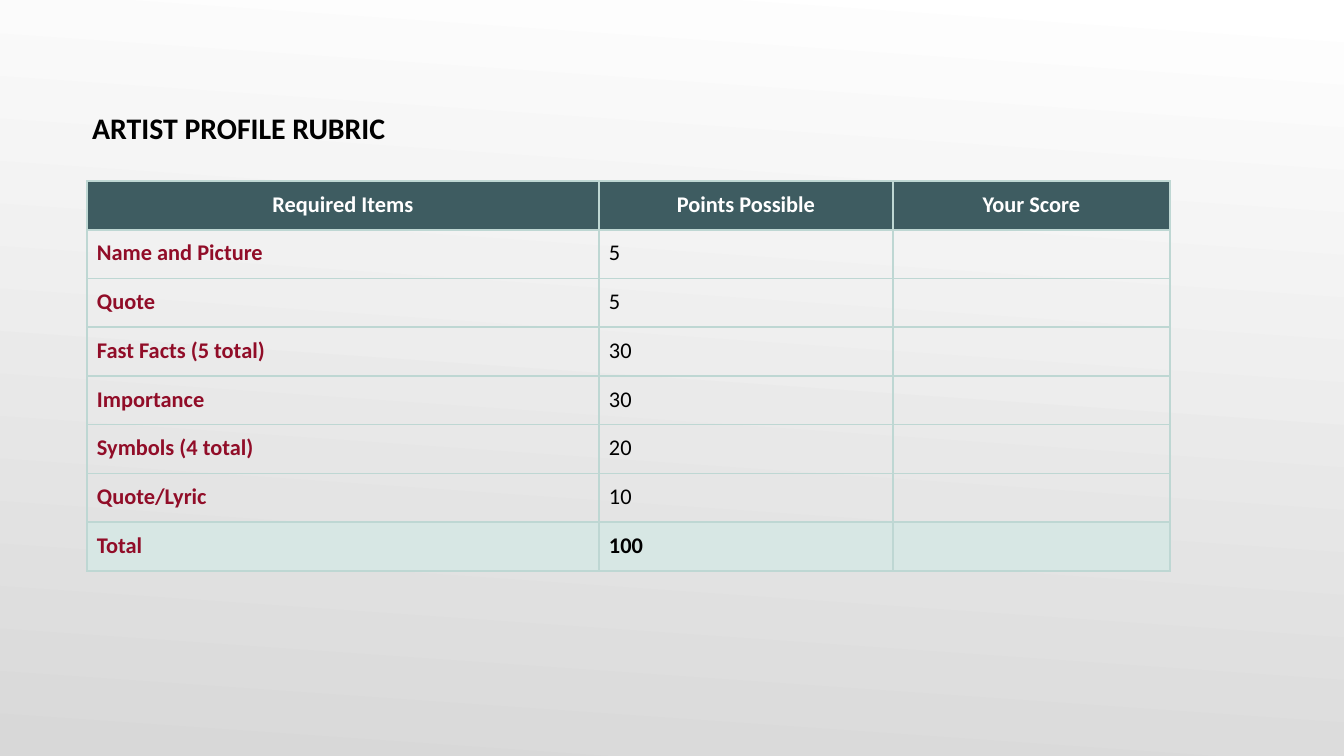
from lxml.etree import SubElement
from pptx import Presentation
from pptx.dml.color import RGBColor
from pptx.enum.text import MSO_ANCHOR, PP_ALIGN
from pptx.oxml.ns import qn
from pptx.util import Pt

TITLE = "ARTIST PROFILE RUBRIC"
ROWS = [
    ("Required Items", "Points Possible", "Your Score"),
    ("Name and Picture", "5", ""),
    ("Quote", "5", ""),
    ("Fast Facts (5 total)", "30", ""),
    ("Importance", "30", ""),
    ("Symbols (4 total)", "20", ""),
    ("Quote/Lyric", "10", ""),
    ("Total", "100", ""),
]
COLORS = {
    "top": "FFFFFF", "base": "D8D8D8", "head": "3E5C61", "total": "D7E7E4",
    "grid": "BED7D3", "item": "910D28", "white": "FFFFFF", "black": "000000",
}
SCALE = 914400 / 134.4
SLIDE = (1344, 756)
TITLE_BOX = (79, 104, 441, 48)
LEFT, TOP, HEIGHT = 87, 181, 390
WIDTHS = (512, 294, 277)
PAD = 10


def px(n):
    return round(n * SCALE)


def color(name):
    return RGBColor.from_string(COLORS[name])


def assign(target, **values):
    for name, value in values.items():
        setattr(target, name, value)


def write(frame, text, size, tint, bold, align=PP_ALIGN.LEFT):
    para = frame.paragraphs[0]
    para.alignment = align
    if not text:
        para._p.get_or_add_endParaRPr().set("sz", str(size * 100))
        return
    run = para.add_run()
    run.text = text
    assign(run.font, name="Calibri", size=Pt(size), bold=bold)
    run.font.color.rgb = color(tint)


def border(cell):
    props = cell._tc.get_or_add_tcPr()
    for side in ("lnL", "lnR", "lnT", "lnB"):
        line = SubElement(props, qn(f"a:{side}"), w=str(Pt(1)))
        fill = SubElement(line, qn("a:solidFill"))
        SubElement(fill, qn("a:srgbClr"), val=COLORS["grid"])


def paint(cell, name):
    if name:
        cell.fill.solid()
        cell.fill.fore_color.rgb = color(name)
    else:
        cell.fill.background()


def add_title(slide):
    frame = slide.shapes.add_textbox(*map(px, TITLE_BOX)).text_frame
    assign(frame, word_wrap=True, vertical_anchor=MSO_ANCHOR.MIDDLE)
    write(frame, TITLE, 16, "black", True)


def add_rubric(slide):
    box = map(px, (LEFT, TOP, sum(WIDTHS), HEIGHT))
    table = slide.shapes.add_table(len(ROWS), len(WIDTHS), *box).table
    table.horz_banding = False
    for col, width in zip(table.columns, WIDTHS):
        col.width = px(width)
    fills = {0: "head", len(ROWS) - 1: "total"}
    for r, row in enumerate(ROWS):
        for c, text in enumerate(row):
            cell = table.cell(r, c)
            assign(cell, **{f"margin_{side}": px(PAD)
                            for side in ("left", "right", "top", "bottom")})
            border(cell)
            paint(cell, fills.get(r))
            tint = "white" if r == 0 else "item" if c == 0 else "black"
            align = PP_ALIGN.CENTER if r == 0 else PP_ALIGN.LEFT
            write(cell.text_frame, text, 12, tint, r in fills or c == 0, align)


def main():
    deck = Presentation()
    assign(deck, slide_width=px(SLIDE[0]), slide_height=px(SLIDE[1]))
    slide = deck.slides.add_slide(deck.slide_layouts[6])
    fill = slide.background.fill
    fill.gradient()
    fill.gradient_angle = 360 - 94
    for stop, name in zip(fill.gradient_stops, ("top", "base")):
        stop.color.rgb = color(name)
    add_rubric(slide)
    add_title(slide)
    deck.save("out.pptx")


if __name__ == "__main__":
    main()
